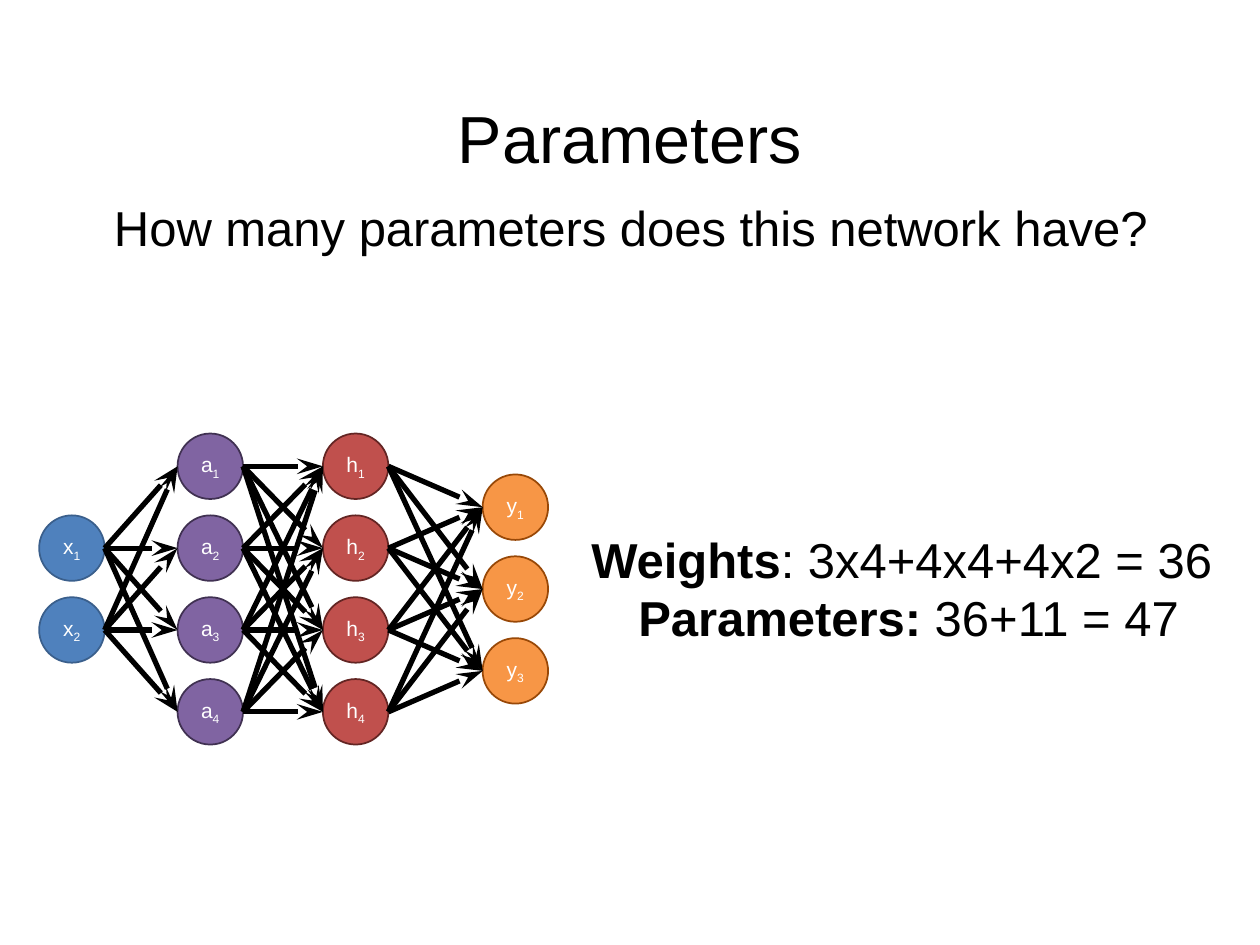
from dataclasses import dataclass
from itertools import pairwise, product

from lxml.etree import SubElement
from pptx import Presentation
from pptx.dml.color import RGBColor
from pptx.enum.shapes import MSO_CONNECTOR as CONNECTOR, MSO_SHAPE as SHAPE
from pptx.enum.text import MSO_ANCHOR as ANCHOR, PP_ALIGN as ALIGN
from pptx.oxml.ns import qn
from pptx.util import Cm, Pt


@dataclass(frozen=True)
class Theme:
    font: str = "Arial"
    title: int = 38
    body: int = 28
    label: int = 12
    ink: str = "000000"
    paper: str = "FFFFFF"
    outline: float = 1
    arrow: float = 3


THEME = Theme()

# name, number of nodes, left offset in cm, fill, outline
LAYERS = [
    ("x", 2, 0, "4F81BD", "3A5F8C"),
    ("a", 4, 2.79, "8064A2", "403152"),
    ("h", 4, 5.72, "C0504D", "632523"),
    ("y", 3, 8.94, "F79646", "984807"),
]
NODE = 1.32
PITCH = 1.65


def rgb(value):
    return RGBColor.from_string(value)


def add_run(p, text, size, color, bold=False):
    r = p.add_run()
    r.text = text
    r.font.name = THEME.font
    r.font.size = Pt(size)
    r.font.bold = bold
    r.font.color.rgb = rgb(color)
    return r


def add_text(s, box, lines, size, anchor=ANCHOR.TOP, spacing=1.0):
    """Centred text; each line is a list of (text, bold) runs."""
    tf = s.shapes.add_textbox(*map(Cm, box)).text_frame
    tf.word_wrap = True
    tf.vertical_anchor = anchor
    for i, runs in enumerate(lines):
        p = tf.add_paragraph() if i else tf.paragraphs[0]
        p.alignment = ALIGN.CENTER
        p.line_spacing = spacing
        for text, bold in runs:
            add_run(p, text, size, THEME.ink, bold)


def add_node(s, left, top, name, number, fill, outline):
    sp = s.shapes.add_shape(SHAPE.OVAL, Cm(left), Cm(top), Cm(NODE), Cm(NODE))
    sp.shadow.inherit = False
    sp.fill.solid()
    sp.fill.fore_color.rgb = rgb(fill)
    sp.line.color.rgb = rgb(outline)
    sp.line.width = Pt(THEME.outline)
    tf = sp.text_frame
    tf.margin_left = tf.margin_right = tf.margin_top = tf.margin_bottom = 0
    tf.vertical_anchor = ANCHOR.MIDDLE
    p = tf.paragraphs[0]
    p.alignment = ALIGN.CENTER
    add_run(p, name, THEME.label, THEME.paper)
    r = add_run(p, str(number), THEME.label, THEME.paper)
    r.font._element.set("baseline", "-25000")


def add_arrow(s, start, end):
    """Arrow from the right side of one node to the left side of another."""
    (x1, y1), (x2, y2) = start, end
    half = NODE / 2
    line = s.shapes.add_connector(
        CONNECTOR.STRAIGHT,
        Cm(x1 + NODE), Cm(y1 + half), Cm(x2), Cm(y2 + half))
    line.line.color.rgb = rgb(THEME.ink)
    line.line.width = Pt(THEME.arrow)
    SubElement(line.line._get_or_add_ln(), qn("a:tailEnd"),
               type="stealth", w="med", len="lg")
    SubElement(line._element.spPr, qn("a:effectLst"))


def add_network(s, box):
    """Fully connected layers, each centred on the height of the box."""
    left, top, _, height = box
    columns = []
    for name, count, offset, fill, outline in LAYERS:
        first = top + (height - (count - 1) * PITCH - NODE) / 2
        column = [(left + offset, first + i * PITCH) for i in range(count)]
        for number, (x, y) in enumerate(column, 1):
            add_node(s, x, y, name, number, fill, outline)
        columns.append(column)
    for sources, targets in pairwise(columns):
        for start, end in product(sources, targets):
            add_arrow(s, start, end)


def main():
    prs = Presentation()
    prs.slide_width, prs.slide_height = Cm(25.4), Cm(19.05)
    s = prs.slides.add_slide(prs.slide_layouts[6])
    add_text(s, (1.75, 1.02, 21.9, 3.68), [[("Parameters", False)]],
             THEME.title, ANCHOR.MIDDLE, 0.9)
    add_text(s, (0.79, 3.86, 23.85, 1.45),
             [[("How many parameters does this network have?", False)]],
             THEME.body)
    add_text(s, (10.72, 10.54, 15.19, 2.64),
             [[("Weights", True), (": 3x4+4x4+4x2 = 36 ", False)],
              [("Parameters: ", True), ("36+11 = 47", False)]],
             THEME.body)
    add_network(s, (0.79, 8.74, 10.26, 6.27))
    prs.save("out.pptx")


if __name__ == "__main__":
    main()
